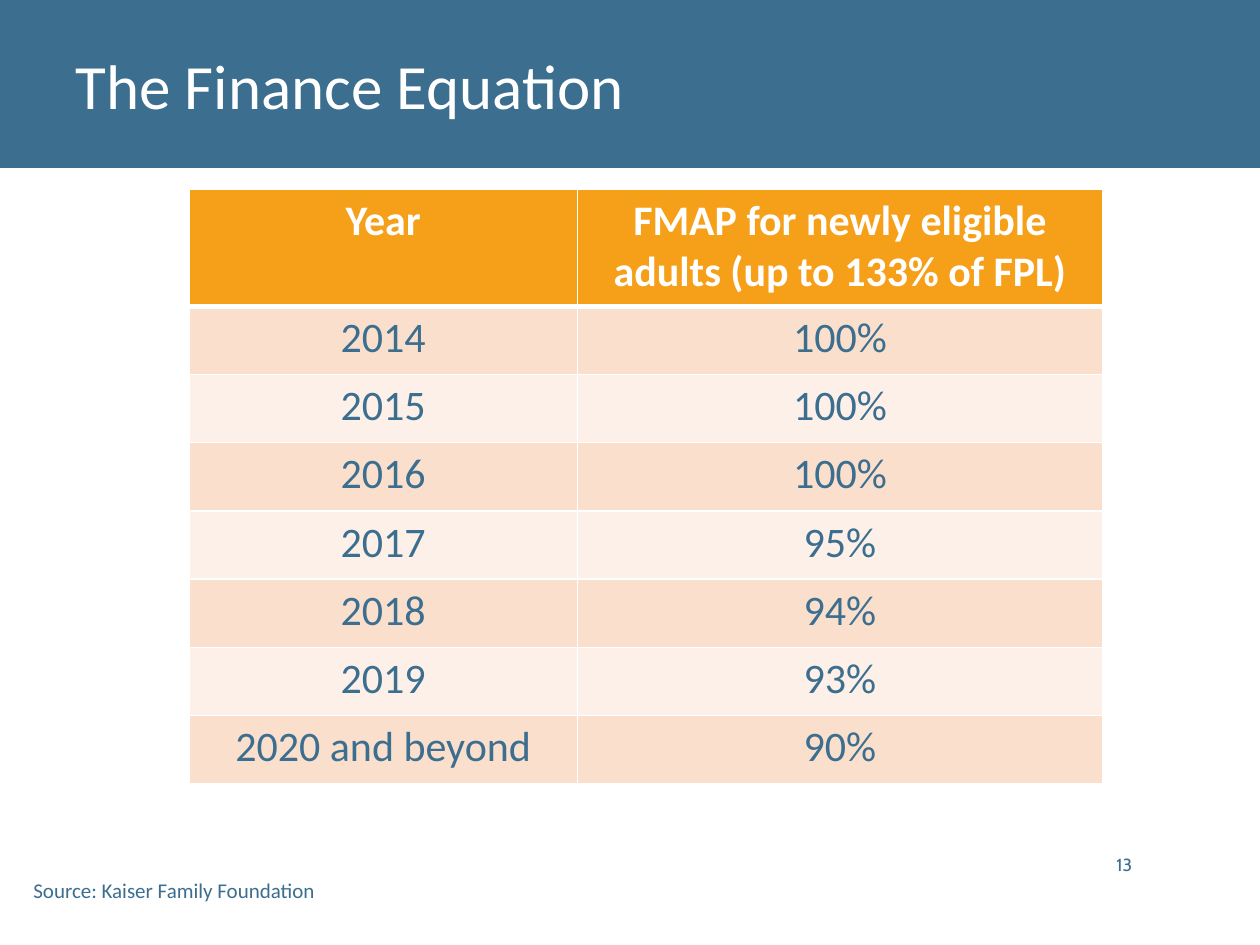
"""Build the Finance Equation slide with its table of federal match rates by year."""
from lxml import etree
from pptx import Presentation
from pptx.dml.color import RGBColor
from pptx.enum.shapes import MSO_SHAPE
from pptx.enum.text import MSO_ANCHOR, MSO_AUTO_SIZE, PP_ALIGN
from pptx.oxml.ns import qn
from pptx.util import Pt

LEFT, CENTER, RIGHT = PP_ALIGN.LEFT, PP_ALIGN.CENTER, PP_ALIGN.RIGHT
TOP, MIDDLE, BOTTOM = MSO_ANCHOR.TOP, MSO_ANCHOR.MIDDLE, MSO_ANCHOR.BOTTOM
NO_AUTOFIT = MSO_AUTO_SIZE.NONE
RECTANGLE = MSO_SHAPE.RECTANGLE

WHITE = RGBColor(0xFF, 0xFF, 0xFF)
BLUE = RGBColor(0x3B, 0x6E, 0x8F)
ORANGE = RGBColor(0xF6, 0xA0, 0x1A)
PEACH = RGBColor(0xFB, 0xDF, 0xCD)
PALE_PEACH = RGBColor(0xFD, 0xF0, 0xE8)

BAND_HEIGHT = 96
COLUMN_WIDTHS = (222, 300)
HEADER_HEIGHT, ROW_HEIGHT = 67, 39
RATES = (
    ("Year", "FMAP for newly eligible adults (up to 133% of FPL)"),
    ("2014", "100%"),
    ("2015", "100%"),
    ("2016", "100%"),
    ("2017", "95%"),
    ("2018", "94%"),
    ("2019", "93%"),
    ("2020 and beyond", "90%"),
)


def write(frame, text, size, color, font="Calibri", bold=False, align=LEFT):
    """Put one formatted paragraph into a text frame."""
    paragraph = frame.paragraphs[0]
    paragraph.alignment = align
    run = paragraph.add_run()
    run.text = text
    run.font.name = font
    run.font.size = Pt(size)
    run.font.bold = bold
    run.font.color.rgb = color


def add_title(slide, text):
    """Fill the title placeholder and lay the coloured band behind it."""
    title = slide.shapes.title
    title.left, title.top = Pt(36), Pt(0)
    title.width, title.height = Pt(648), Pt(BAND_HEIGHT)
    title.text_frame.auto_size = NO_AUTOFIT
    title.text_frame.vertical_anchor = MIDDLE
    write(title.text_frame, text, size=36, color=WHITE)
    band = slide.shapes.add_shape(RECTANGLE, Pt(0), Pt(0), Pt(720), Pt(BAND_HEIGHT))
    band.shadow.inherit = False
    band.fill.solid()
    band.fill.fore_color.rgb = BLUE
    band.line.fill.background()
    title._element.addprevious(band._element)


def add_label(slide, text, left, top, width, height, anchor=TOP, wrap=True, **style):
    """Add a text box holding one line."""
    label = slide.shapes.add_textbox(Pt(left), Pt(top), Pt(width), Pt(height))
    label.text_frame.word_wrap = wrap
    label.text_frame.vertical_anchor = anchor
    write(label.text_frame, text, **style)


def set_borders(cell, **widths):
    """Draw white cell borders with a width in points for each side."""
    properties = cell._tc.get_or_add_tcPr()
    for side, width in widths.items():
        border = etree.SubElement(properties, qn(f"a:ln{side}"), w=str(Pt(width)))
        fill = etree.SubElement(border, qn("a:solidFill"))
        etree.SubElement(fill, qn("a:srgbClr"), val=str(WHITE))


def add_rates_table(slide, left, top):
    """Add the banded table of rates by year."""
    height = HEADER_HEIGHT + ROW_HEIGHT * (len(RATES) - 1)
    table = slide.shapes.add_table(
        len(RATES), len(COLUMN_WIDTHS), Pt(left), Pt(top), Pt(sum(COLUMN_WIDTHS)), Pt(height)
    ).table
    for column, width in zip(table.columns, COLUMN_WIDTHS):
        column.width = Pt(width)
    for index, entries in enumerate(RATES):
        is_header = index == 0
        table.rows[index].height = Pt(HEADER_HEIGHT if is_header else ROW_HEIGHT)
        background = ORANGE if is_header else (PALE_PEACH, PEACH)[index % 2]
        for cell, entry in zip(table.rows[index].cells, entries):
            set_borders(cell, L=1, R=1, T=3 if index == 1 else 1, B=3 if is_header else 1)
            cell.fill.solid()
            cell.fill.fore_color.rgb = background
            write(cell.text_frame, entry, size=24, color=WHITE if is_header else BLUE,
                  bold=is_header, align=CENTER)


def main():
    """Assemble and save the slide."""
    deck = Presentation()
    deck.slide_width, deck.slide_height = Pt(720), Pt(540)
    slide = deck.slides.add_slide(deck.slide_layouts[5])
    add_title(slide, "The Finance Equation")
    add_label(slide, "13", 625, 474.5, 29, 29, anchor=BOTTOM,
              size=10, color=BLUE, font="Cabin", align=RIGHT)
    add_rates_table(slide, 108, 108)
    add_label(slide, "Source: Kaiser Family Foundation", 12, 498, 177, 22, wrap=False,
              size=12, color=BLUE)
    deck.save("out.pptx")


if __name__ == "__main__":
    main()
